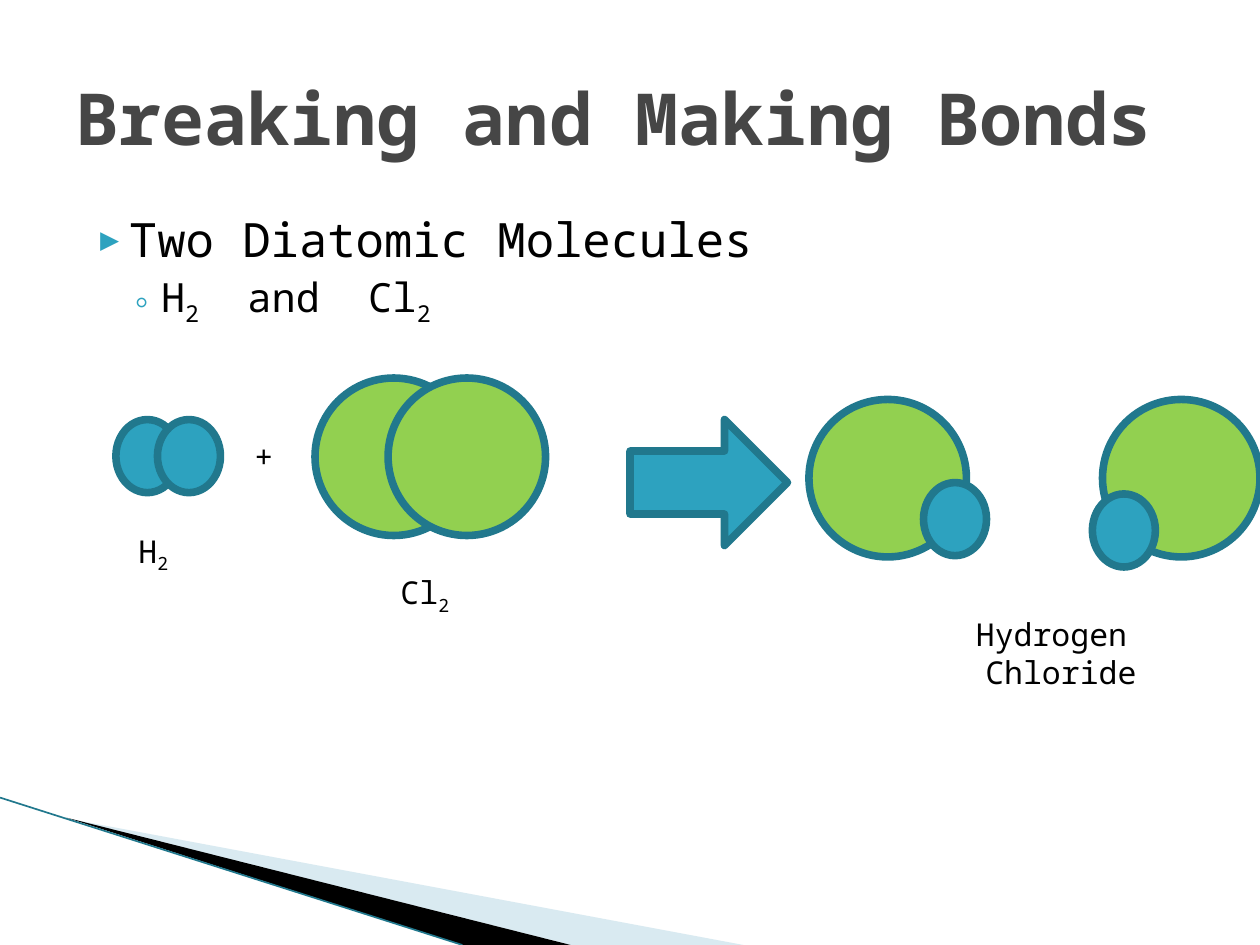
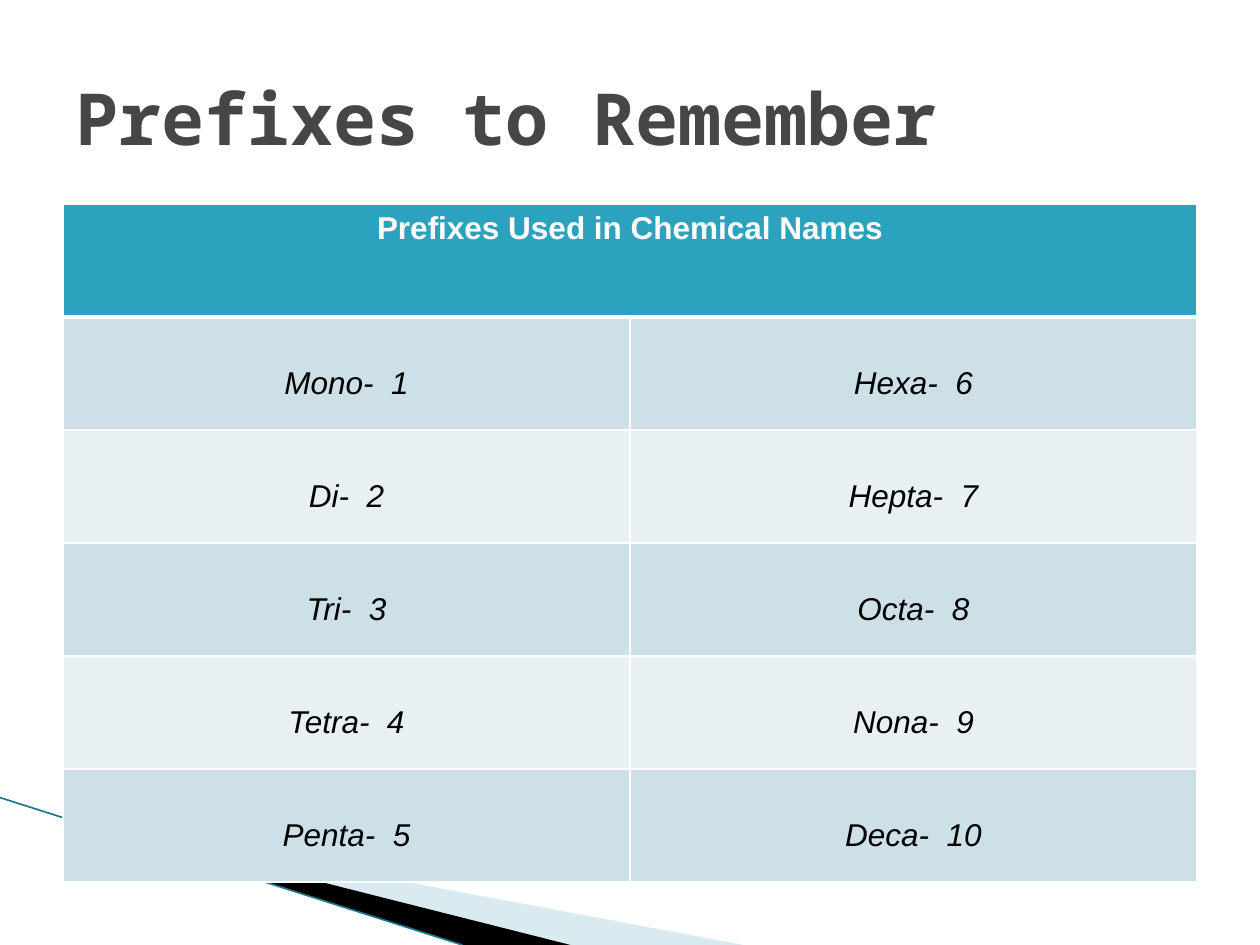
from lxml.etree import SubElement
from pptx import Presentation
from pptx.dml.color import RGBColor
from pptx.enum.shapes import MSO_CONNECTOR, MSO_SHAPE
from pptx.enum.text import MSO_ANCHOR, MSO_AUTO_SIZE, PP_ALIGN
from pptx.oxml.ns import qn
from pptx.util import Inches, Pt

MONO, SANS = "Noto Sans Mono", "Arial"
TEAL, DARK_TEAL, GREEN = "2DA2BF", "21788D", "92D050"
BLACK, WHITE, TITLE_GREY, PALE_BLUE = "000000", "FFFFFF", "464646", "A0CBDC"
ROW_FILLS = ("CDE0E8", "E8F0F4")
HYDROGEN, CHLORINE = (0.5, 0.58, TEAL), (1.25, 1.25, GREEN)
PREFIXES = [
    ("Mono-  1", "Hexa-  6"),
    ("Di-  2", "Hepta-  7"),
    ("Tri-  3", "Octa-  8"),
    ("Tetra-  4", "Nona-  9"),
    ("Penta-  5", "Deca-  10"),
]


def colour(hex_code):
    """Turn a hex string into a colour."""
    return RGBColor.from_string(hex_code)


def add_run(paragraph, text, size, font=MONO, hex_code=BLACK, bold=False,
            italic=False, subscript=False):
    """Append one formatted run to a paragraph."""
    run = paragraph.add_run()
    run.text = text
    run.font.size = Pt(size)
    run.font.name = font
    run.font.bold = bold
    run.font.italic = italic
    run.font.color.rgb = colour(hex_code)
    if subscript:
        run._r.get_or_add_rPr().set("baseline", "-25000")


def add_formula(paragraph, parts, size):
    """Write text parts, setting every second one as a subscript."""
    for index, part in enumerate(parts):
        add_run(paragraph, part, size, subscript=index % 2 == 1)


def add_text_frame(slide, left, top, width, height, wrap=True):
    """Add a text box and return its frame."""
    frame = slide.shapes.add_textbox(
        Inches(left), Inches(top), Inches(width), Inches(height)).text_frame
    frame.word_wrap = wrap
    return frame


def add_bullet(paragraph, symbol, margin, hanging, percent=100):
    """Give a paragraph a teal bullet with a hanging indent."""
    properties = paragraph._p.get_or_add_pPr()
    properties.set("marL", str(Inches(margin)))
    properties.set("indent", str(-Inches(hanging)))
    bullet_colour = SubElement(properties, qn("a:buClr"))
    SubElement(bullet_colour, qn("a:srgbClr")).set("val", TEAL)
    SubElement(properties, qn("a:buSzPct")).set("val", str(percent * 1000))
    SubElement(properties, qn("a:buFont")).set("typeface", MONO)
    SubElement(properties, qn("a:buChar")).set("char", symbol)


def add_wedge(slide, corners, hex_code, opacity=100):
    """Draw one filled corner wedge."""
    points = [(Inches(x), Inches(y)) for x, y in corners]
    builder = slide.shapes.build_freeform(*points[0])
    builder.add_line_segments(points[1:], close=True)
    wedge = builder.convert_to_shape()
    wedge.shadow.inherit = False
    wedge.fill.solid()
    wedge.fill.fore_color.rgb = colour(hex_code)
    wedge.line.fill.background()
    if opacity < 100:
        shade = wedge.fill._xPr.find(".//" + qn("a:srgbClr"))
        SubElement(shade, qn("a:alpha")).set("val", str(opacity * 1000))


def add_corner_band(slide):
    """Draw the two wedges and the edge line at the lower left."""
    add_wedge(slide, [(0.55, 6.5), (5.9, 7.5), (4.53, 7.5)], PALE_BLUE, 40)
    add_wedge(slide, [(0.53, 6.49), (4.53, 7.5), (3.67, 7.5)], BLACK)
    edge = slide.shapes.add_connector(
        MSO_CONNECTOR.STRAIGHT, 0, Inches(6.33), Inches(3.67), Inches(7.5))
    edge.line.color.rgb = colour(DARK_TEAL)
    edge.line.width = Pt(0.95)
    SubElement(edge._element.spPr, qn("a:effectLst"))


def start_slide(deck, heading):
    """Add a slide with the shared band and title."""
    slide = deck.slides.add_slide(deck.slide_layouts[5])
    add_corner_band(slide)
    title = slide.shapes.title
    title.left, title.top = Inches(0.5), Inches(0.3)
    title.width, title.height = Inches(9), Inches(1.25)
    frame = title.text_frame
    frame.auto_size = MSO_AUTO_SIZE.NONE
    frame.vertical_anchor = MSO_ANCHOR.MIDDLE
    frame.paragraphs[0].alignment = PP_ALIGN.LEFT
    add_run(frame.paragraphs[0], heading, 41, hex_code=TITLE_GREY, bold=True)
    return slide


def add_outlined(slide, preset, left, top, width, height, hex_code):
    """Draw a preset shape with the thick dark teal outline."""
    shape = slide.shapes.add_shape(
        preset, Inches(left), Inches(top), Inches(width), Inches(height))
    shape.shadow.inherit = False
    shape.fill.solid()
    shape.fill.fore_color.rgb = colour(hex_code)
    shape.line.color.rgb = colour(DARK_TEAL)
    shape.line.width = Pt(4.33)


def add_molecule(slide, left, top, *atoms):
    """Draw atoms, each given as an element and its offset in the molecule."""
    for (width, height, hex_code), dx, dy in atoms:
        add_outlined(slide, MSO_SHAPE.OVAL, left + dx, top + dy, width, height, hex_code)


def add_bullets(slide, left, top, width, height):
    """Write the two levels of bullets."""
    frame = add_text_frame(slide, left, top, width, height)
    topic = frame.paragraphs[0]
    add_bullet(topic, "▶", 0.4, 0.28, 68)
    add_run(topic, "Two Diatomic Molecules", 27)
    formulas = frame.add_paragraph()
    formulas.level = 1
    add_bullet(formulas, "◦", 0.68, 0.25)
    formulas.space_before = Pt(3.2)
    add_formula(formulas, ("H", "2", "  and  Cl", "2"), 23)


def add_reaction(slide, left, top):
    """Draw hydrogen and chlorine turning into hydrogen chloride."""
    add_molecule(slide, left, top + 0.33, (HYDROGEN, 0, 0), (HYDROGEN, 0.33, 0))
    add_molecule(slide, left + 1.58, top, (CHLORINE, 0, 0), (CHLORINE, 0.58, 0))
    add_outlined(slide, MSO_SHAPE.RIGHT_ARROW, left + 4.08, top + 0.33, 1.25, 1, TEAL)
    add_molecule(slide, left + 5.5, top + 0.17, (CHLORINE, 0, 0), (HYDROGEN, 0.91, 0.66))
    add_molecule(slide, left + 7.83, top + 0.17, (CHLORINE, 0, 0), (HYDROGEN, -0.08, 0.75))

    for parts, dx, dy in ((("H", "2"), 0.08, 1.17), (("Cl", "2"), 2.16, 1.5)):
        label = add_text_frame(slide, left + dx, top + dy, 0.65, 0.4)
        add_formula(label.paragraphs[0], parts, 18)
    plus = add_text_frame(slide, left + 1, top + 0.42, 0.4, 0.4, wrap=False)
    add_run(plus.paragraphs[0], "+", 18)

    product = add_text_frame(slide, left + 6.25, top + 1.83, 2.5, 0.71)
    for paragraph, word in ((product.paragraphs[0], "Hydrogen "),
                            (product.add_paragraph(), "Chloride")):
        paragraph.alignment = PP_ALIGN.CENTER
        add_run(paragraph, word, 18)


def set_borders(cell, top=1, bottom=1):
    """Give a cell white borders of the given widths."""
    properties = cell._tc.get_or_add_tcPr()
    for side, width in (("L", 1), ("R", 1), ("T", top), ("B", bottom)):
        border = SubElement(properties, qn("a:ln" + side), w=str(Pt(width)))
        fill = SubElement(border, qn("a:solidFill"))
        SubElement(fill, qn("a:srgbClr")).set("val", WHITE)


def fill_cell(cell, hex_code):
    """Fill a cell with one colour."""
    cell.fill.solid()
    cell.fill.fore_color.rgb = colour(hex_code)


def write_cell(cell, text, **style):
    """Write centred text in a cell."""
    paragraph = cell.text_frame.paragraphs[0]
    paragraph.alignment = PP_ALIGN.CENTER
    add_run(paragraph, text, 18, SANS, **style)


def add_prefix_table(slide, left, top, width, height):
    """Build the table of number prefixes under a merged heading."""
    row_count = len(PREFIXES) + 1
    table = slide.shapes.add_table(
        row_count, 2, Inches(left), Inches(top), Inches(width), Inches(height)).table
    for row in table.rows:
        row.height = Inches(height / row_count)
    for heading in table.rows[0].cells:
        set_borders(heading, bottom=3)
        fill_cell(heading, TEAL)
    table.cell(0, 0).merge(table.cell(0, 1))
    write_cell(table.cell(0, 0), "Prefixes Used in Chemical Names",
               hex_code=WHITE, bold=True)
    for number, pair in enumerate(PREFIXES, 1):
        for column, prefix in enumerate(pair):
            cell = table.cell(number, column)
            set_borders(cell, top=3 if number == 1 else 1)
            fill_cell(cell, ROW_FILLS[(number - 1) % 2])
            cell.margin_top = Inches(0.39)
            write_cell(cell, prefix, italic=True)


def build_bonds_slide(deck):
    """Build the slide on breaking and making bonds."""
    slide = start_slide(deck, "Breaking and Making Bonds")
    add_bullets(slide, 0.5, 1.62, 9, 1.2)
    add_reaction(slide, 0.92, 3)


def build_prefixes_slide(deck):
    """Build the slide listing the prefixes."""
    slide = start_slide(deck, "Prefixes to Remember")
    add_prefix_table(slide, 0.5, 1.62, 9, 5.38)


def main():
    """Build and save the deck."""
    deck = Presentation()
    deck.slide_width, deck.slide_height = Inches(10), Inches(7.5)
    build_bonds_slide(deck)
    build_prefixes_slide(deck)
    deck.save("out.pptx")


if __name__ == "__main__":
    main()
